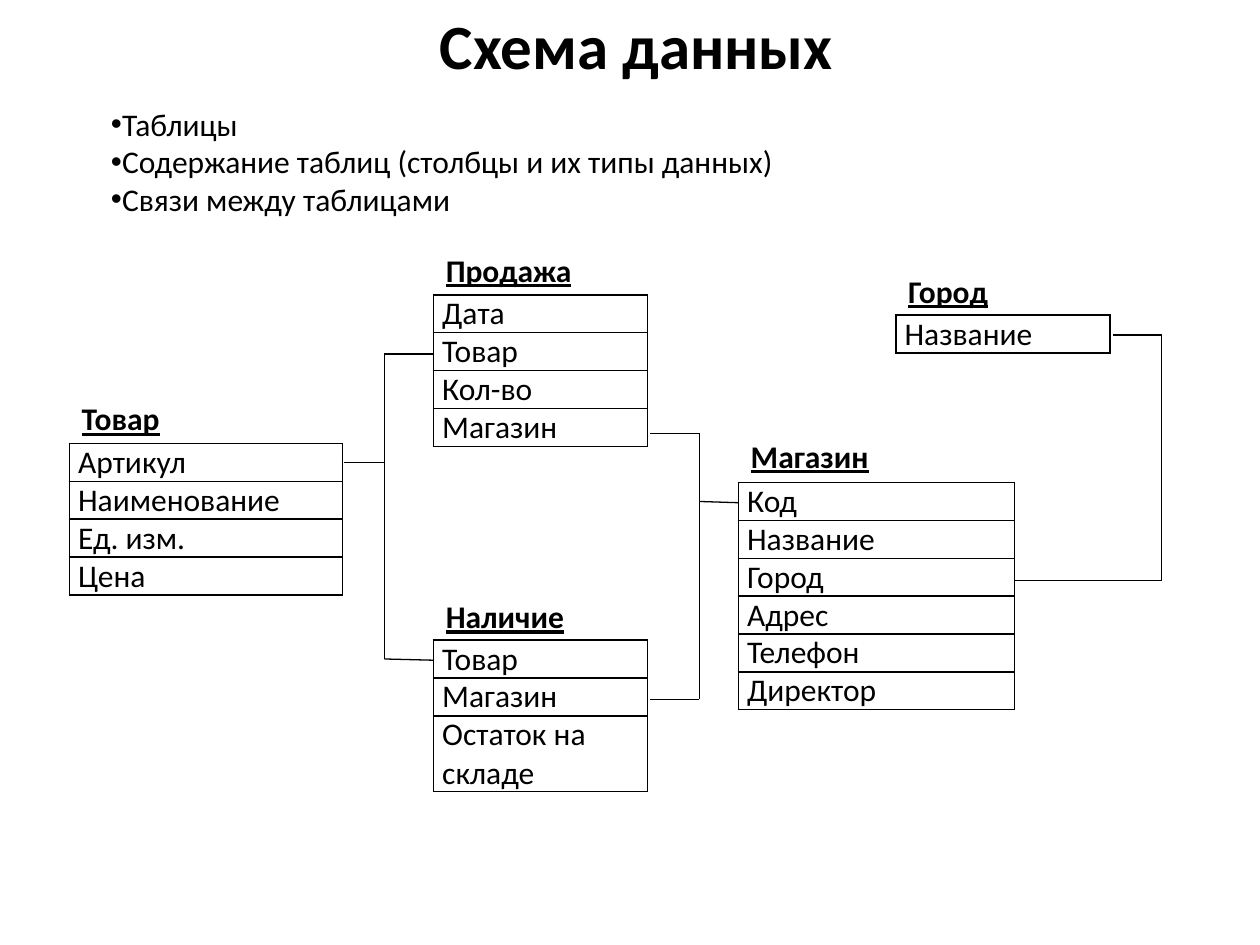
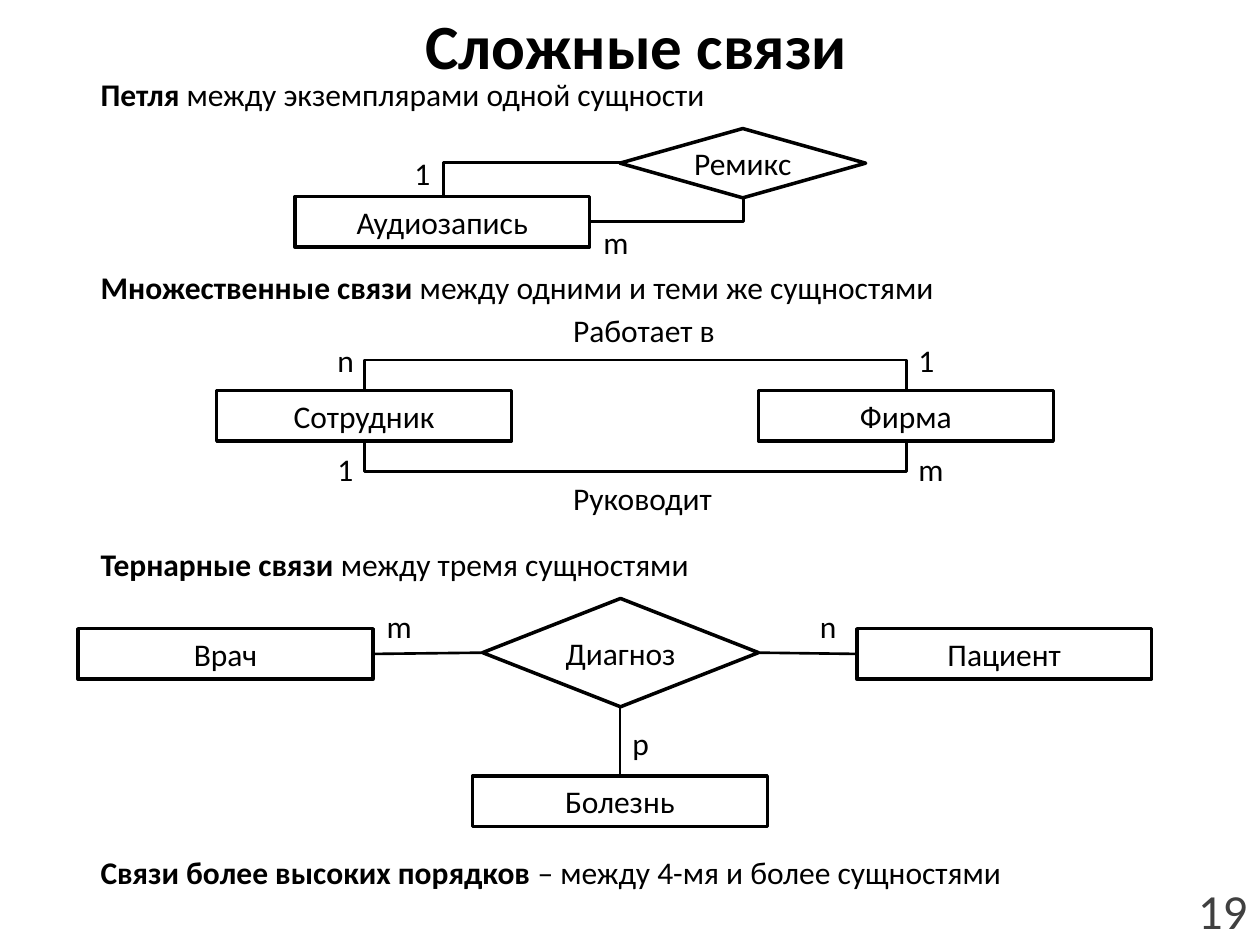
from dataclasses import dataclass
from itertools import pairwise

from lxml.etree import SubElement
from pptx import Presentation
from pptx.dml.color import RGBColor
from pptx.enum.shapes import MSO_CONNECTOR as Connector, MSO_SHAPE as Shape
from pptx.enum.text import MSO_ANCHOR as Anchor, MSO_AUTO_SIZE as AutoSize, PP_ALIGN as Align
from pptx.oxml.ns import qn
from pptx.util import Inches, Pt


@dataclass(frozen=True)
class Theme:
    font: str = "Calibri"
    ink: RGBColor = RGBColor(0, 0, 0)
    paper: RGBColor = RGBColor(255, 255, 255)
    muted: RGBColor = RGBColor(0x40, 0x40, 0x40)
    title_size: int = 36
    text_size: int = 18
    number_size: int = 28
    link_width: float = 0.75
    border_width: float = 1
    relation_width: float = 1.5
    outline_width: float = 2


TITLE_AND_CONTENT, TITLE_ONLY = 1, 5
ROW_HEIGHT = 0.3
LABEL_HEIGHT = 0.4
ENTITY_SIZE = (2.34, 0.4)


class SlideBuilder:
    def __init__(self, deck, theme):
        self.deck = deck
        self.theme = theme
        self.page = None

    def new_page(self, title, layout):
        self.page = self.deck.slides.add_slide(self.deck.slide_layouts[layout])
        box = self.page.shapes.title
        self.place(box, 0.55, 0, 9, 0.78)
        frame = box.text_frame
        frame.text = title
        frame.auto_size = AutoSize.NONE
        frame.vertical_anchor = Anchor.TOP
        frame.paragraphs[0].alignment = Align.CENTER
        self.style(frame, self.theme.title_size, bold=True)

    def place(self, box, left, top, width, height):
        box.left, box.top = Inches(left), Inches(top)
        box.width, box.height = Inches(width), Inches(height)

    def style(self, frame, size=None, color=None, bold=False, underline=False):
        for para in frame.paragraphs:
            for span in para.runs:
                font = span.font
                font.name = self.theme.font
                font.size = Pt(size or self.theme.text_size)
                font.color.rgb = color or self.theme.ink
                font.bold = bold
                font.underline = underline

    def bullets(self, items, left, top, width, height):
        box = self.page.placeholders[1]
        self.place(box, left, top, width, height)
        frame = box.text_frame
        frame.text = "\n".join(items)
        frame.auto_size = AutoSize.NONE
        self.style(frame)
        for para in frame.paragraphs:
            para.space_before = Pt(0)
            properties = para._p.get_or_add_pPr()
            properties.set("marL", str(Inches(0.09)))
            properties.set("indent", str(-Inches(0.09)))
            SubElement(properties, qn("a:buChar"), char="•")

    def text(self, words, left, top, width, height=LABEL_HEIGHT, align=Align.LEFT, **style):
        box = self.page.shapes.add_textbox(
            Inches(left), Inches(top), Inches(width), Inches(height))
        frame = box.text_frame
        frame.text = words
        frame.word_wrap = True
        frame.paragraphs[0].alignment = align
        self.style(frame, **style)
        return frame

    def heading(self, term, rest, top):
        frame = self.text(term, 0.7, top, 8.5)
        frame.paragraphs[0].add_run().text = rest
        self.style(frame)
        frame.paragraphs[0].runs[0].font.bold = True

    def page_number(self, number):
        frame = self.text(number, 9.14, 6.95, 0.86, 0.55, Align.RIGHT,
                          size=self.theme.number_size, color=self.theme.muted)
        frame.vertical_anchor = Anchor.MIDDLE

    def data_table(self, name, fields, left, top, width, name_top):
        self.text(name, left, name_top, width, bold=True, underline=True)
        table = self.page.shapes.add_table(
            len(fields), 1, Inches(left), Inches(top), Inches(width),
            Inches(ROW_HEIGHT * len(fields))).table
        table.first_row = table.horz_banding = False
        for row, field in zip(table.rows, fields):
            row.height = Inches(ROW_HEIGHT)
            cell = row.cells[0]
            cell.text = field
            cell.margin_left = cell.margin_right = Inches(0.07)
            cell.margin_top = cell.margin_bottom = 0
            self.style(cell.text_frame)
            self.cell_borders(cell)
            cell.fill.solid()
            cell.fill.fore_color.rgb = self.theme.paper

    def cell_borders(self, cell):
        properties = cell._tc.get_or_add_tcPr()
        for side in ("a:lnL", "a:lnR", "a:lnT", "a:lnB"):
            line = SubElement(properties, qn(side), w=str(Pt(self.theme.border_width)))
            fill = SubElement(line, qn("a:solidFill"))
            SubElement(fill, qn("a:srgbClr"), val=str(self.theme.ink))

    def node(self, words, left, top, size=ENTITY_SIZE, kind=Shape.RECTANGLE):
        width, height = size
        box = self.page.shapes.add_shape(
            kind, Inches(left), Inches(top), Inches(width), Inches(height))
        box.shadow.inherit = False
        box.fill.solid()
        box.fill.fore_color.rgb = self.theme.paper
        box.line.color.rgb = self.theme.ink
        box.line.width = Pt(self.theme.outline_width)
        frame = box.text_frame
        frame.text = words
        frame.word_wrap = kind == Shape.RECTANGLE
        frame.vertical_anchor = Anchor.MIDDLE
        frame.paragraphs[0].alignment = Align.CENTER
        self.style(frame)

    def connector(self, kind, width, start, end):
        line = self.page.shapes.add_connector(kind, *map(Inches, start + end))
        line.line.color.rgb = self.theme.ink
        line.line.width = Pt(width)
        properties = line._element.spPr
        SubElement(properties, qn("a:effectLst"))
        return properties

    def wire(self, width, *points):
        """Join the points in turn with straight connectors."""
        for start, end in pairwise(points):
            self.connector(Connector.STRAIGHT, width, start, end)

    def elbow(self, preset, left, top, width, height, rotation, flips, bend=None):
        """Draw a bent connector; bend is its offset in connector widths."""
        properties = self.connector(Connector.ELBOW, self.theme.relation_width,
                                    (left, top), (left + width, top + height))
        transform = properties.find(qn("a:xfrm"))
        transform.set("rot", str(rotation * 60000))
        for flip in flips:
            transform.set(f"flip{flip}", "1")
        geometry = properties.find(qn("a:prstGeom"))
        geometry.set("prst", preset)
        if bend is not None:
            SubElement(geometry.find(qn("a:avLst")), qn("a:gd"),
                       name="adj1", fmla=f"val {bend * 100000}")


def data_schema(builder):
    builder.new_page("Схема данных", TITLE_AND_CONTENT)
    builder.bullets(["Таблицы", "Содержание таблиц (столбцы и их типы данных)",
                     "Связи между таблицами"], 0.78, 0.78, 8.13, 1.01)

    # Tables: name, fields, left, top, width, top of the name
    for table in (
        ("Товар", ["Артикул", "Наименование", "Ед. изм.", "Цена"], 0.55, 3.52, 2.17, 3.12),
        ("Продажа", ["Дата", "Товар", "Кол-во", "Магазин"], 3.44, 2.34, 1.7, 1.94),
        ("Магазин", ["Код", "Название", "Город", "Адрес", "Телефон", "Директор"],
         5.86, 3.83, 2.19, 3.42),
        ("Город", ["Название"], 7.11, 2.5, 1.7, 2.11),
        ("Наличие", ["Товар", "Магазин", "Остаток на складе"], 3.44, 5.08, 1.7, 4.69),
    ):
        builder.data_table(*table)

    # Links between key fields
    for link in (
        [(3.44, 2.81), (3.05, 2.81), (3.05, 5.23), (3.44, 5.24)],
        [(2.73, 3.67), (3.05, 3.67)],
        [(5.16, 3.44), (5.55, 3.44), (5.55, 5.55), (5.16, 5.55)],
        [(5.55, 3.98), (5.86, 3.99)],
        [(8.83, 2.66), (9.22, 2.66), (9.22, 4.61), (8.05, 4.61)],
    ):
        builder.wire(builder.theme.link_width, *link)


def complex_relations(builder):
    builder.new_page("Сложные связи", TITLE_ONLY)
    builder.page_number("19")

    # Section headings
    for term, rest, top in (
        ("Петля ", "между экземплярами одной сущности", 0.55),
        ("Множественные связи ", "между одними и теми же сущностями", 2.08),
        ("Тернарные связи ", "между тремя сущностями", 4.28),
        ("Связи более высоких порядков ", "– между 4-мя и более сущностями", 6.72),
    ):
        builder.heading(term, rest, top)

    # Loop and multiple relations
    builder.elbow("bentConnector2", 3.52, 1.29, 1.4, 0.27, 180, "V")
    builder.elbow("bentConnector2", 4.69, 1.56, 1.21, 0.2, 0, "V")
    builder.elbow("bentConnector3", 5.04, 0.95, 0.01, 4.3, 90, "HV", 25)
    builder.elbow("bentConnector3", 5.04, 1.35, 0.01, 4.3, 270, "H", 25)

    # Ternary relation
    for relation in (
        [(2.97, 5.19), (3.83, 5.18)],
        [(6.02, 5.18), (6.8, 5.19)],
        [(4.92, 6.16), (4.92, 5.61)],
    ):
        builder.wire(builder.theme.relation_width, *relation)

    # Entities and relation diamonds
    for entity in (("Аудиозапись", 2.34, 1.56), ("Сотрудник", 1.72, 3.1),
                   ("Фирма", 6.02, 3.1), ("Врач", 0.62, 4.99),
                   ("Пациент", 6.8, 4.99), ("Болезнь", 3.75, 6.16)):
        builder.node(*entity)
    builder.node("Ремикс", 4.92, 1.02, (1.95, 0.55), Shape.FLOWCHART_DECISION)
    builder.node("Диагноз", 3.83, 4.75, (2.19, 0.86), Shape.FLOWCHART_DECISION)

    # Relation names and cardinalities
    for name, top in (("Работает в", 2.42), ("Руководит", 3.75)):
        builder.text(name, 4.45, top, 1.5)
    for mark, left, top in (
        ("1", 3.19, 1.17), ("m", 4.69, 1.72),
        ("n", 2.58, 2.66), ("1", 7.19, 2.66),
        ("1", 2.58, 3.52), ("m", 7.19, 3.52),
        ("m", 2.97, 4.77), ("n", 6.41, 4.77), ("p", 4.92, 5.7),
    ):
        builder.text(mark, left, top, 0.4)


def main():
    deck = Presentation()
    deck.slide_width, deck.slide_height = Inches(10), Inches(7.5)
    builder = SlideBuilder(deck, Theme())
    data_schema(builder)
    complex_relations(builder)
    deck.save("out.pptx")


if __name__ == "__main__":
    main()
